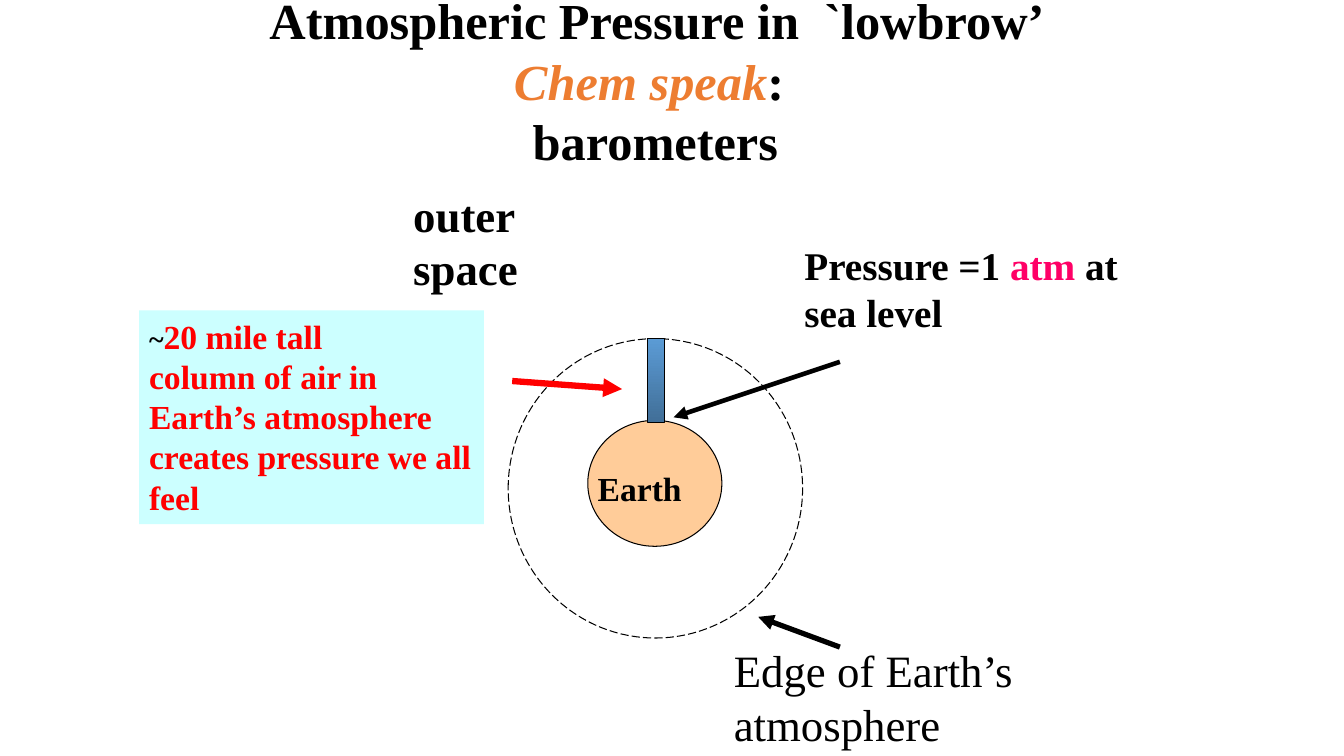
from lxml import etree
from pptx import Presentation
from pptx import util as u
from pptx.dml.color import RGBColor
from pptx.enum import dml, shapes, text
from pptx.oxml import ns

PX = 9144  # EMU in one px, at 100 px to the inch
FONT = "Times New Roman"
BLACK, RED, ORANGE, PINK = "000000", "FF0000", "ED7D31", "FF0066"
PEACH, CYAN = "FFCC99", "CCFFFF"
AIR_TOP, AIR_BOTTOM = "5B9BD5", "416F98"


def rgb(value):
    return RGBColor.from_string(value)


def px(*lengths):
    return [u.Emu(n * PX) for n in lengths]


def add_run(p, words, size=24, color=BLACK, bold=True, italic=False):
    """Add a run; a vertical tab in words becomes a line break."""
    for i, part in enumerate(words.split("\v")):
        if i:
            p.add_line_break()
        r = p.add_run()
        r.text = part
        f = r.font
        f.name, f.size, f.bold, f.italic = FONT, u.Pt(size), bold, italic
        f.color.rgb = rgb(color)


class Diagram:
    def __init__(self, prs):
        self.slide = prs.slides.add_slide(prs.slide_layouts[5])
        self.shapes = self.slide.shapes

    def set_text(self, sp, paragraphs, align=text.PP_ALIGN.LEFT,
                 anchor=text.MSO_ANCHOR.TOP,
                 fit=text.MSO_AUTO_SIZE.SHAPE_TO_FIT_TEXT):
        """Fill a shape with paragraphs, each a list of (words, format) runs."""
        tf = sp.text_frame
        tf.word_wrap, tf.auto_size, tf.vertical_anchor = True, fit, anchor
        for i, runs in enumerate(paragraphs):
            p = tf.add_paragraph() if i else tf.paragraphs[0]
            p.alignment = align
            for words, style in runs:
                add_run(p, words, **style)

    def title(self, box, runs):
        sp = self.shapes.title
        sp.left, sp.top, sp.width, sp.height = px(*box)
        self.set_text(sp, [runs], text.PP_ALIGN.CENTER, text.MSO_ANCHOR.MIDDLE,
                      text.MSO_AUTO_SIZE.NONE)

    def label(self, box, *runs):
        self.set_text(self.shapes.add_textbox(*px(*box)), [runs])

    def shape(self, kind, box, fill=None, line=BLACK, dash=None):
        sp = self.shapes.add_shape(kind, *px(*box))
        sp.shadow.inherit = False
        if fill:
            sp.fill.solid()
            sp.fill.fore_color.rgb = rgb(fill)
        else:
            sp.fill.background()
        if line:
            sp.line.color.rgb = rgb(line)
            sp.line.width = u.Pt(0.75)
            sp.line.dash_style = dash
        else:
            sp.line.fill.background()
        return sp

    def gradient_bar(self, box, top, bottom):
        sp = self.shape(shapes.MSO_SHAPE.RECTANGLE, box)
        sp.fill.gradient()
        sp.fill.gradient_angle = 270
        for stop, color in zip(sp.fill.gradient_stops, (top, bottom)):
            stop.color.rgb = rgb(color)

    def arrow(self, start, end, width, color=BLACK):
        sp = self.shapes.add_connector(shapes.MSO_CONNECTOR.STRAIGHT, *px(*start, *end))
        sp.line.color.rgb = rgb(color)
        sp.line.width = u.Pt(width)
        ln = sp.line.fill._xPr
        etree.SubElement(ln, ns.qn("a:tailEnd"), type="triangle")
        etree.SubElement(ln.getparent(), ns.qn("a:effectLst"))


def main():
    prs = Presentation()
    prs.slide_width, prs.slide_height = px(1333, 750)
    d = Diagram(prs)
    oval, rect = shapes.MSO_SHAPE.OVAL, shapes.MSO_SHAPE.RECTANGLE

    d.label((400, 181, 217, 118), ("outer space", dict(size=32)))
    d.shape(oval, (583, 417, 133, 125), PEACH)
    d.shape(oval, (504, 336, 292, 297), dash=dml.MSO_LINE.LONG_DASH)
    d.gradient_bar((642, 336, 17, 83), AIR_TOP, AIR_BOTTOM)
    d.label((583, 459, 126, 51), ("Earth", {}))
    d.arrow((833, 642), (752, 612), 3.75)

    note = d.shape(rect, (138, 308, 342, 212), CYAN, line=None)
    d.set_text(note, [
        [("~", dict(size=20)), ("20 mile tall", dict(color=RED))],
        [("column of air in Earth’s atmosphere creates pressure we all feel",
          dict(color=RED))],
    ])

    d.arrow((833, 359), (668, 414), 3.25)
    d.label((788, 234, 374, 104), ("Pressure =1 ", dict(size=28)),
            ("atm ", dict(size=28, color=PINK)), ("at sea level", dict(size=28)))
    d.arrow((508, 378), (617, 386), 4.5, RED)
    d.title((200, 17, 900, 125), [
        ("Atmospheric Pressure in  `lowbrow’ ", dict(size=36)),
        ("Chem speak", dict(size=36, color=ORANGE, italic=True)),
        (": \vbarometers", dict(size=36)),
    ])
    d.label((718, 633, 409, 118), ("Edge of Earth’s atmosphere", dict(size=32, bold=False)))
    prs.save("out.pptx")


if __name__ == "__main__":
    main()
